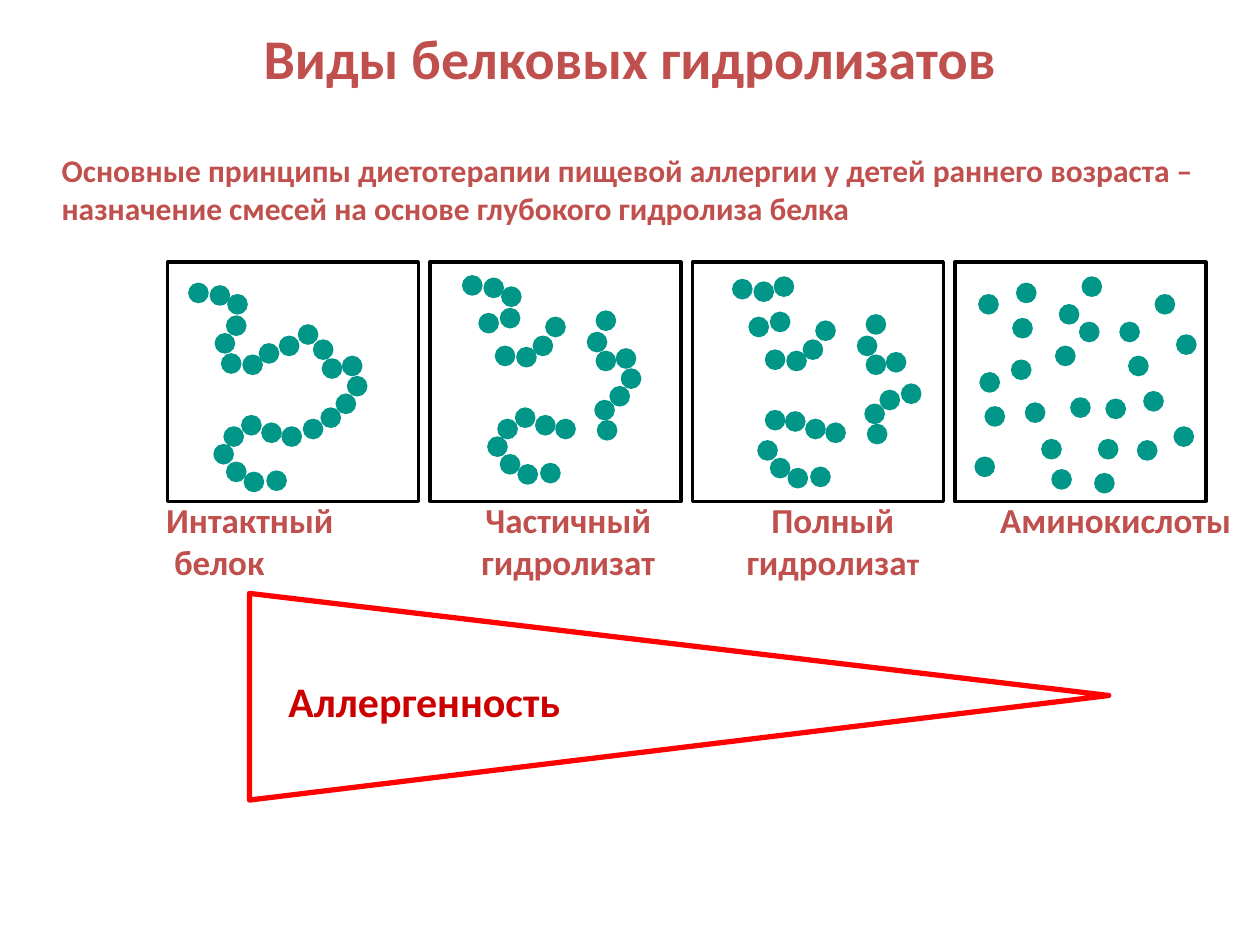
"""Build the slide on protein hydrolysates: one bead chain, broken up step by step."""
from pptx import Presentation
from pptx.dml.color import RGBColor
from pptx.enum.shapes import MSO_SHAPE as SHAPE
from pptx.enum.text import MSO_ANCHOR as ANCHOR, MSO_AUTO_SIZE as AUTO, PP_ALIGN as ALIGN
from pptx.util import Inches, Pt

COLORS = {"heading": "C0504D", "label": "CC0000", "bead": "009688",
          "frame": "000000", "wedge": "FF0101", "white": "FFFFFF"}
PANEL_LEFT, PANEL_TOP, PANEL_WIDTH, PANEL_HEIGHT = 1.33, 2.08, 1.99, 1.9
PANEL_STEP = 6.25 / 3
BEAD = 0.15


def write(tf, *lines, color="heading", align=ALIGN.LEFT, wrap=True):
    tf.word_wrap = wrap
    for i, runs in enumerate(lines):
        p = tf.add_paragraph() if i else tf.paragraphs[0]
        p.alignment = align
        for text, size in runs:
            r = p.add_run()
            r.text = text
            r.font.name = "Calibri"
            r.font.size = Pt(size)
            r.font.bold = True
            r.font.color.rgb = RGBColor.from_string(COLORS[color])


def draw(shapes, kind, left, top, width, height, fill, line, weight):
    sp = shapes.add_shape(kind, Inches(left), Inches(top), Inches(width), Inches(height))
    sp.shadow.inherit = False
    sp.fill.solid()
    sp.fill.fore_color.rgb = RGBColor.from_string(COLORS[fill])
    sp.line.color.rgb = RGBColor.from_string(COLORS[line])
    sp.line.width = Pt(weight)
    return sp


prs = Presentation()
prs.slide_width, prs.slide_height = Inches(10), Inches(7.5)
s = prs.slides.add_slide(prs.slide_layouts[5])

title = s.shapes.title
title.left, title.top = Inches(0.59), Inches(0)
title.width, title.height = Inches(8.82), Inches(0.91)
title.text_frame.vertical_anchor = ANCHOR.MIDDLE
write(title.text_frame, [("Виды белковых гидролизатов", 32)], align=ALIGN.CENTER)

intact_chain = [
    (0.17, 0.17), (0.34, 0.19), (0.48, 0.26), (0.47, 0.43), (0.38, 0.57),
    (0.43, 0.73), (0.6, 0.74), (0.73, 0.65), (0.89, 0.59), (1.04, 0.5),
    (1.16, 0.62), (1.23, 0.77), (1.39, 0.75), (1.43, 0.91), (1.34, 1.05),
    (1.22, 1.16), (1.08, 1.25), (0.91, 1.31), (0.75, 1.28), (0.59, 1.22),
    (0.45, 1.31), (0.37, 1.45), (0.47, 1.59), (0.61, 1.67), (0.79, 1.66)]
free_amino_acids = [
    (0.19, 0.26), (0.49, 0.17), (1.01, 0.12), (0.83, 0.34), (0.46, 0.45),
    (0.2, 0.88), (0.45, 0.78), (0.8, 0.67), (0.99, 0.48), (1.59, 0.26),
    (1.38, 0.75), (1.31, 0.48), (1.76, 0.58), (1.74, 1.31), (1.5, 1.03),
    (1.14, 1.41), (0.16, 1.55), (0.24, 1.15), (0.56, 1.12), (0.92, 1.08),
    (1.2, 1.09), (1.45, 1.42), (0.69, 1.41), (0.77, 1.65), (1.11, 1.68)]

hydrolysis_steps = [
    {"shift": (0.09, -0.06),
     "breaks": {4: (-0.08, -0.1), 8: (-0.06, -0.09), 9: (0.19, -0.05), 16: (0.16, 0.07)}},
    {"shift": (0.06, 0.03),
     "breaks": {2: (0.02, -0.11), 13: (0.08, 0.09), 20: (-0.02, -0.1)}},
]
panels = [intact_chain]
for step in hydrolysis_steps:
    shift_x, shift_y = step["shift"]
    beads = []
    for n, (x, y) in enumerate(panels[-1]):
        break_x, break_y = step["breaks"].get(n, (0, 0))
        beads.append((x + shift_x + break_x, y + shift_y + break_y))
    panels.append(beads)
panels.append(free_amino_acids)

for i, beads in enumerate(panels):
    panel_left = PANEL_LEFT + i * PANEL_STEP
    draw(s.shapes, SHAPE.RECTANGLE, panel_left, PANEL_TOP, PANEL_WIDTH, PANEL_HEIGHT,
         "white", "frame", 2)
    shapes = s.shapes if beads is free_amino_acids else s.shapes.add_group_shape().shapes
    for x, y in beads:
        draw(shapes, SHAPE.OVAL, panel_left + x, PANEL_TOP + y, BEAD, BEAD, "bead", "bead", 1)

wedge = draw(s.shapes, SHAPE.ISOSCELES_TRIANGLE, 4.57, 2.12, 1.64, 6.82, "white", "wedge", 3)
wedge.adjustments[0] = 0.494
wedge.rotation = 90

subtitle = ("Основные принципы диетотерапии пищевой аллергии у детей раннего возраста – "
            "назначение смесей на основе глубокого гидролиза белка")
centered = {"align": ALIGN.CENTER}
texts = [
    ((2.19, 5.31, 2.49, 0.5), [[("Аллергенность", 24)]], {"color": "label", "wrap": False}),
    ((1.22, 3.91, 1.72, 0.77), [[("Интактный", 20)], [(" белок", 20)]], {}),
    ((3.62, 3.91, 1.78, 0.77), [[("Частичный", 20)], [("гидролизат", 20)]], centered),
    ((5.71, 3.91, 1.8, 0.81), [[("Полный", 20)], [("гидролиза", 20), ("т", 18)]], centered),
    ((7.7, 3.91, 2.31, 0.43), [[("Аминокислоты", 20)]], centered),
    ((0.39, 1.15, 9.21, 1.03), [[(subtitle, 18)]], {}),
]
for box, lines, style in texts:
    tf = s.shapes.add_textbox(*map(Inches, box)).text_frame
    tf.auto_size = AUTO.SHAPE_TO_FIT_TEXT
    write(tf, *lines, **style)

prs.save("out.pptx")
